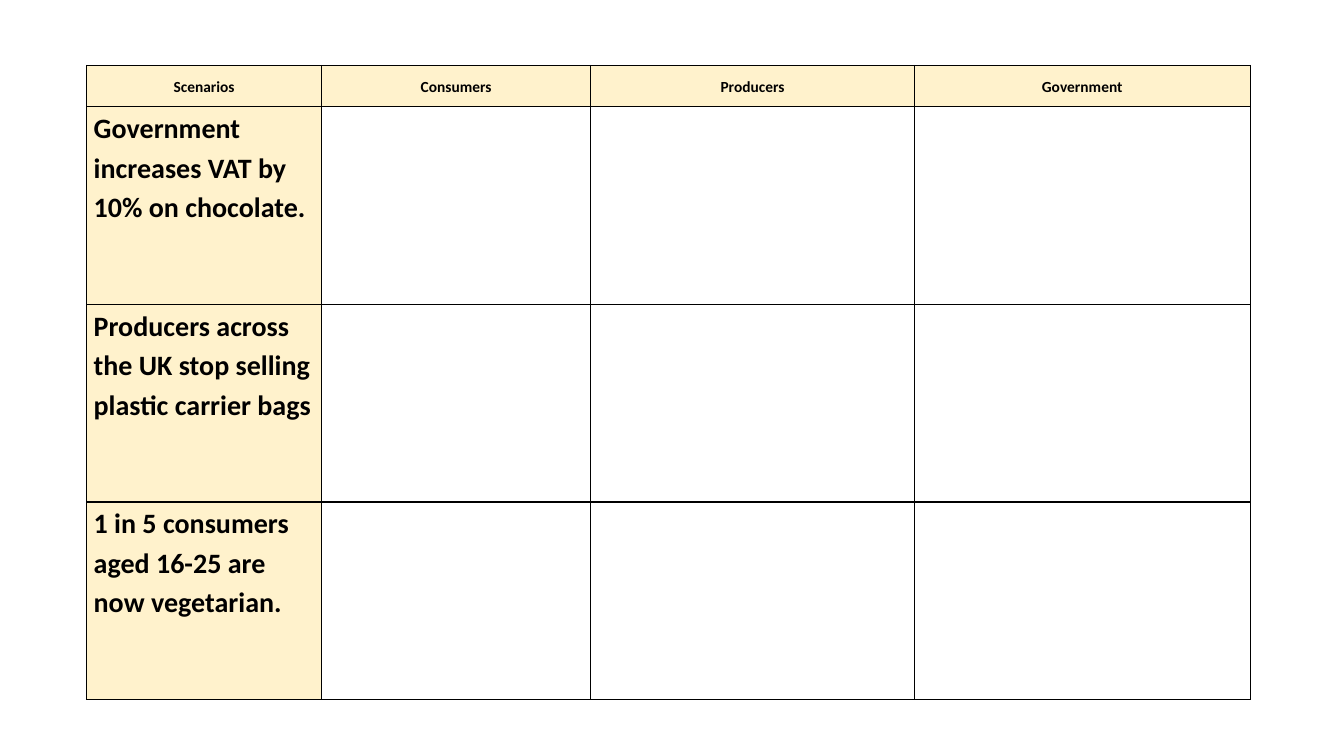
"""Build a slide with a blank scenario worksheet table."""
from lxml.etree import SubElement
from pptx import Presentation
from pptx.dml.color import RGBColor
from pptx.enum.text import MSO_ANCHOR, PP_ALIGN
from pptx.oxml.ns import qn
from pptx.util import Inches, Pt

COLORS = {"heading": "FFF2CC", "answer": "FFFFFF", "ink": "000000"}
HEADERS = ["Scenarios", "Consumers", "Producers", "Government"]
SCENARIOS = [
    "Government increases VAT by 10% on chocolate.",
    "Producers across the UK stop selling plastic carrier bags",
    "1 in 5 consumers aged 16-25 are now vegetarian.",
]
COL_WIDTHS = [2.33, 2.67, 3.21, 3.33]
ROW_HEIGHTS = [0.41] + [1.96] * len(SCENARIOS)


def add_borders(cell):
    """Draw a thin line on all four sides of a cell."""
    tc_pr = cell._tc.get_or_add_tcPr()
    for side in ("lnL", "lnR", "lnT", "lnB"):
        ln = SubElement(tc_pr, qn(f"a:{side}"), w=str(Pt(1)))
        fill = SubElement(ln, qn("a:solidFill"))
        SubElement(fill, qn("a:srgbClr"), val=COLORS["ink"])


def style_cell(cell, color):
    """Set the borders, fill and margins of a cell."""
    add_borders(cell)
    cell.fill.solid()
    cell.fill.fore_color.rgb = RGBColor.from_string(COLORS[color])
    cell.margin_left = cell.margin_right = Inches(0.07)
    cell.margin_top = cell.margin_bottom = 0


def write_cell(cell, text, size, align):
    """Write bold text in a cell."""
    cell.text_frame.text = text
    p = cell.text_frame.paragraphs[0]
    p.alignment = align
    p.line_spacing = 1.15
    font = p.runs[0].font
    font.name, font.size, font.bold = "Calibri", Pt(size), True
    font.color.rgb = RGBColor.from_string(COLORS["ink"])


def add_worksheet(s):
    """Add the table of scenarios against the groups affected."""
    frame = s.shapes.add_table(
        len(ROW_HEIGHTS), len(COL_WIDTHS), Inches(0.86), Inches(0.65),
        Inches(sum(COL_WIDTHS)), Inches(sum(ROW_HEIGHTS)))
    table = frame.table
    table.horz_banding = False
    for column, width in zip(table.columns, COL_WIDTHS):
        column.width = Inches(width)
    for row, height in zip(table.rows, ROW_HEIGHTS):
        row.height = Inches(height)
    for i in range(len(ROW_HEIGHTS)):
        for j in range(len(COL_WIDTHS)):
            is_heading = i == 0 or j == 0
            style_cell(table.cell(i, j), "heading" if is_heading else "answer")
    for j, header in enumerate(HEADERS):
        cell = table.cell(0, j)
        write_cell(cell, header, 11, PP_ALIGN.CENTER)
        cell.vertical_anchor = MSO_ANCHOR.MIDDLE
    for i, scenario in enumerate(SCENARIOS, start=1):
        write_cell(table.cell(i, 0), scenario, 20, PP_ALIGN.LEFT)


def main():
    """Create the presentation and save it."""
    prs = Presentation()
    prs.slide_width, prs.slide_height = Inches(13.33), Inches(7.5)
    s = prs.slides.add_slide(prs.slide_layouts[6])
    add_worksheet(s)
    prs.save("out.pptx")


if __name__ == "__main__":
    main()
